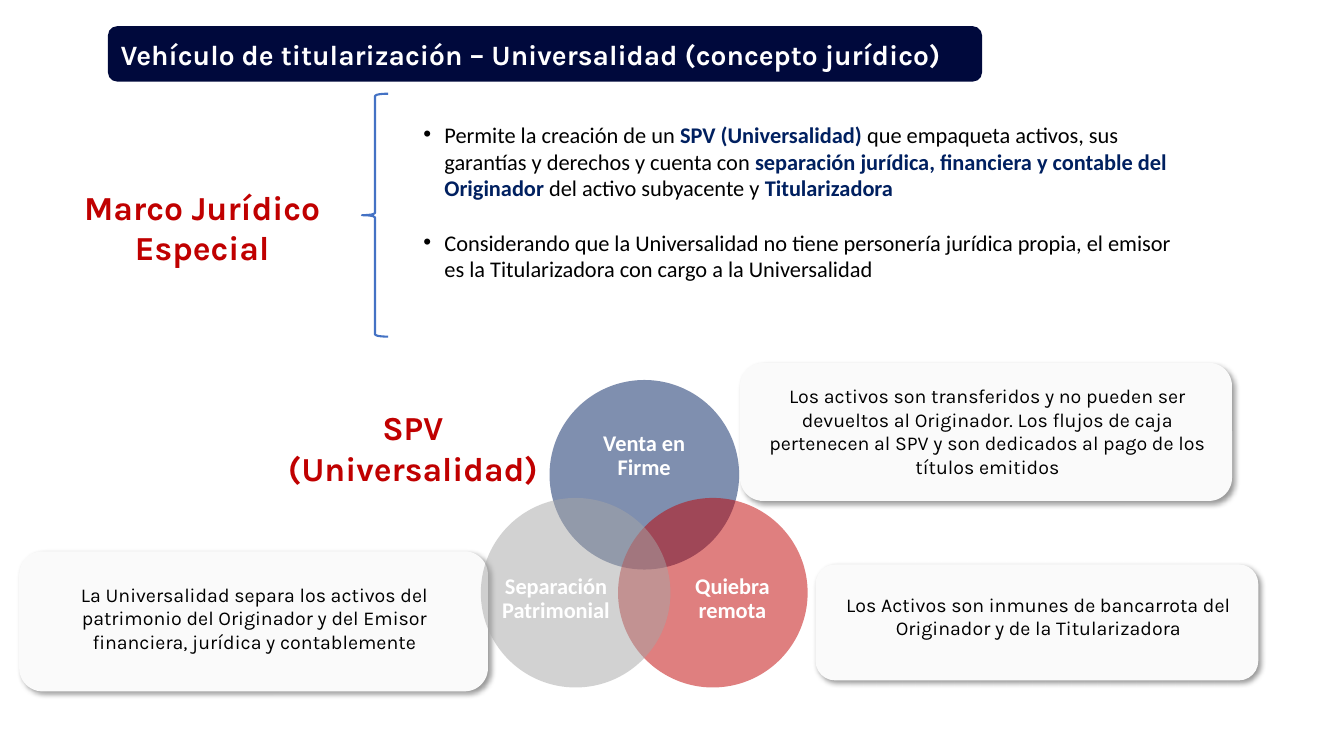
import pptx
import pptx.util
import pptx.dml.color
import pptx.enum.shapes
import pptx.enum.text
import pptx.oxml
import pptx.oxml.ns

COLORS = {"navy": "00093C", "blue": "002060", "red": "C00000", "gray": "A6A6A6",
          "card": "FAFAFA", "brace": "4472C4", "white": "FFFFFF", "black": "000000"}
SHAPES = pptx.enum.shapes.MSO_SHAPE
ALIGN = pptx.enum.text.PP_ALIGN
ANCHOR = pptx.enum.text.MSO_ANCHOR
DRAWING = pptx.oxml.ns.nsdecls("a")

deck = pptx.Presentation()
deck.slide_width = pptx.util.Inches(13.33)
deck.slide_height = pptx.util.Inches(7.5)
page = deck.slides.add_slide(deck.slide_layouts[6])

# Every place is left, top, width, height in hundredths of the slide
COLUMN = deck.slide_width / 100
ROW = deck.slide_height / 100


def add_block(kind, place, fill=None):
    """Add a preset shape, or a text box when kind is None."""
    left, top, width, height = place
    area = [round(length) for length in (left * COLUMN, top * ROW, width * COLUMN, height * ROW)]
    if kind is None:
        return page.shapes.add_textbox(*area)
    shape = page.shapes.add_shape(kind, *area)
    shape.shadow.inherit = False
    shape.line.fill.background()
    if fill:
        shape.fill.solid()
        shape.fill.fore_color.rgb = pptx.dml.color.RGBColor.from_string(COLORS[fill])
    else:
        shape.fill.background()
    return shape


def write_text(box, paragraphs, size=16, font="Karla", color="black", bold=False, align=ALIGN.CENTER,
               anchor=ANCHOR.TOP, inset=None, spacing=None, gap=0, bullet=False):
    """Fill a box; a paragraph is a string or a list of (text, color, bold) runs."""
    frame = box.text_frame
    frame.word_wrap = True
    frame.vertical_anchor = anchor
    if inset is not None:
        frame.margin_left = frame.margin_right = frame.margin_top = frame.margin_bottom = inset
    for number, runs in enumerate(paragraphs):
        para = frame.add_paragraph() if number else frame.paragraphs[0]
        para.alignment = align
        if spacing:
            para.line_spacing = spacing
        if number and gap:
            para.space_before = pptx.util.Pt(gap)
        if bullet:
            indent = pptx.util.Inches(0.21)
            properties = para._p.get_or_add_pPr()
            properties.set("marL", str(indent))
            properties.set("indent", str(-indent))
            for tag in ('buFont {} typeface="Arial"', 'buChar {} char="•"'):
                properties.append(pptx.oxml.parse_xml("<a:" + tag.format(DRAWING) + "/>"))
        if isinstance(runs, str):
            runs = [(runs, color, bold)]
        for text, run_color, run_bold in runs:
            span = para.add_run()
            span.text = text
            span.font.name = font
            span.font.size = pptx.util.Pt(size)
            span.font.bold = run_bold
            span.font.color.rgb = pptx.dml.color.RGBColor.from_string(COLORS[run_color])


title_bar = add_block(SHAPES.ROUNDED_RECTANGLE, (8.03, 3.47, 65.04, 7.33), "navy")
write_text(title_bar, ["Vehículo de titularización – Universalidad (concepto jurídico)"],
           size=20, color="white", bold=True, align=ALIGN.LEFT, anchor=ANCHOR.MIDDLE)

# Cards with a soft shadow towards the lower right
for place in [(60.69, 74.67, 32.93, 15.33), (55.06, 48, 36.61, 18.27), (1.43, 72.93, 34.88, 18.53)]:
    card = add_block(SHAPES.ROUNDED_RECTANGLE, place, "card")
    effects = card._element.spPr.find(pptx.oxml.ns.qn("a:effectLst"))
    effects.append(pptx.oxml.parse_xml(
        f'<a:outerShdw {DRAWING} blurRad="{pptx.util.Pt(4)}" dist="{pptx.util.Pt(3)}" dir="2700000" '
        'algn="tl" rotWithShape="0"><a:srgbClr val="000000"><a:alpha val="40000"/></a:srgbClr></a:outerShdw>'))

# Three overlapping half-transparent circles
DIAMETER = 25.07
CIRCLES = [
    ("Venta en Firme", "blue", 40.89, 50.27, (42.76, 54.67, 10.35, 11.33)),
    ("Quiebra remota", "red", 45.99, 65.87, (50.26, 72.4, 8.48, 13.73)),
    ("Separación Patrimonial", "gray", 35.78, 65.87, (37.13, 72.4, 8.48, 13.73)),
]
for label, fill, left, top, label_place in CIRCLES:
    circle = add_block(SHAPES.OVAL, (left, top, DIAMETER * ROW / COLUMN, DIAMETER), fill)
    fill_color = circle._element.spPr.find(".//" + pptx.oxml.ns.qn("a:srgbClr"))
    fill_color.append(pptx.oxml.parse_xml(f'<a:alpha {DRAWING} val="50000"/>'))
    write_text(add_block(None, label_place), [label], font="Calibri", color="white", bold=True,
               anchor=ANCHOR.MIDDLE, inset=0, spacing=0.9)

for lines, left, top in [(["Marco Jurídico", "Especial"], 4.95, 24),
                         (["SPV", "(Universalidad)"], 20.63, 53.2)]:
    write_text(add_block(None, (left, top, 20.18, 12.13)), lines, size=24, color="red", bold=True)

LEGAL_POINTS = [
    [("Permite la creación de un ", "black", False),
     ("SPV (Universalidad) ", "blue", True),
     ("que empaqueta activos, sus garantías y derechos y cuenta con ", "black", False),
     ("separación jurídica, financiera y contable del Originador", "blue", True),
     (" del activo subyacente y", "black", False),
     (" Titularizadora", "blue", True)],
    "Considerando que la Universalidad no tiene personería jurídica propia, "
    "el emisor es la Titularizadora con cargo a la Universalidad",
]
write_text(add_block(None, (30.76, 15.33, 58.29, 22.93)), LEGAL_POINTS, font="Calibri",
           align=ALIGN.LEFT, gap=19.5, bullet=True)

EXPLANATIONS = [
    ("La Universalidad separa los activos del patrimonio del Originador y del Emisor "
     "financiera, jurídica y contablemente", (2.78, 76.4, 32.33, 10.8)),
    ("Los activos son transferidos y no pueden ser devueltos al Originador. Los flujos de caja "
     "pertenecen al SPV y son dedicados al pago de los títulos emitidos", (56.11, 50.13, 34.73, 13.87)),
    ("Los Activos son inmunes de bancarrota del Originador y de la Titularizadora",
     (61.97, 77.73, 30.61, 7.6)),
]
for text, place in EXPLANATIONS:
    write_text(add_block(None, place), [text], size=14)

brace = add_block(SHAPES.LEFT_BRACE, (26.93, 12.4, 1.95, 32.13))
brace.line.color.rgb = pptx.dml.color.RGBColor.from_string(COLORS["brace"])
brace.line.width = pptx.util.Pt(1.5)

deck.save("out.pptx")
